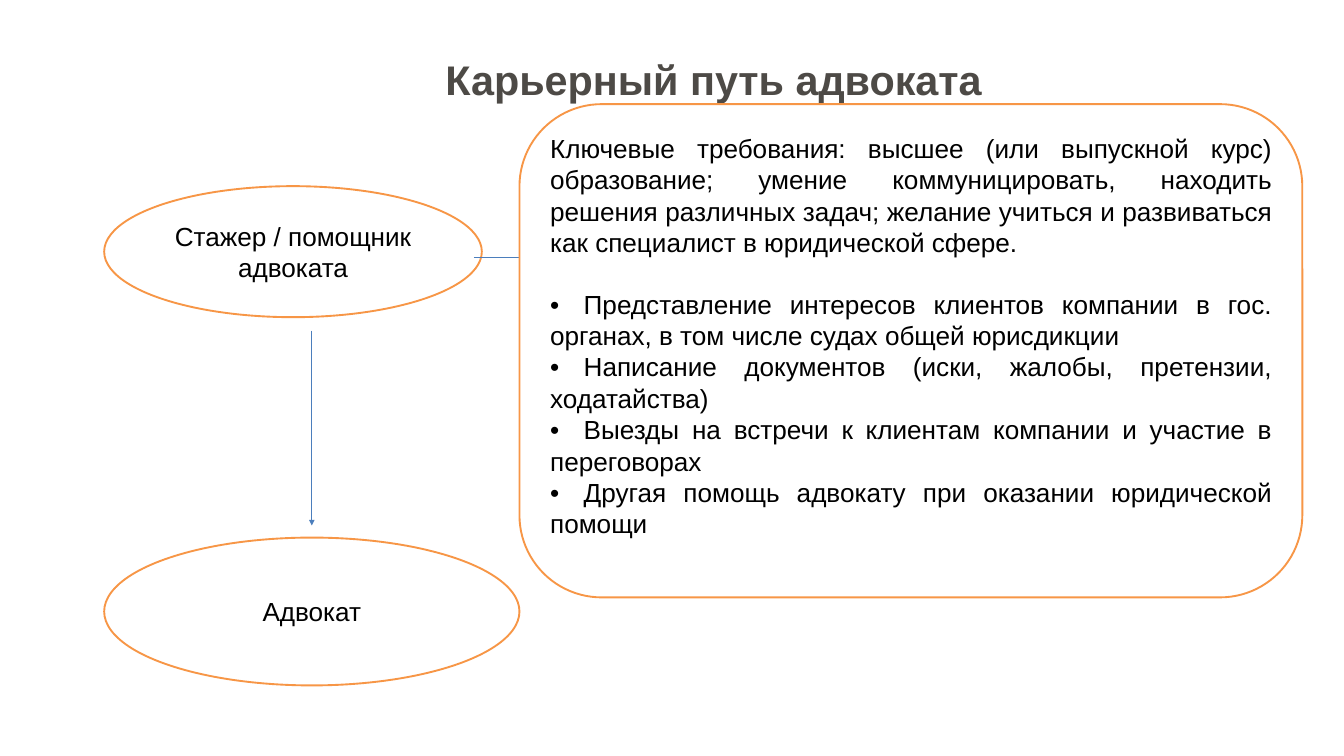
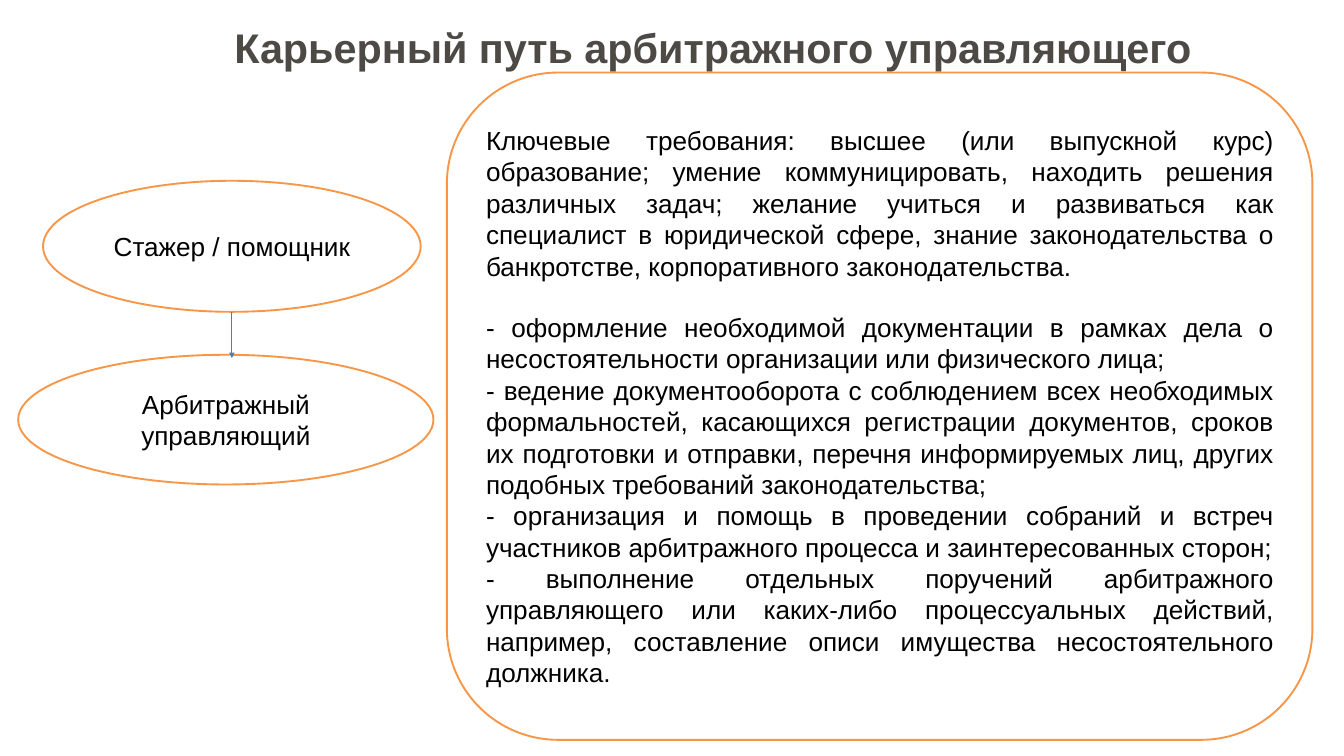
from collections import namedtuple

from lxml.etree import SubElement
from pptx import Presentation
from pptx.dml.color import RGBColor
from pptx.enum.dml import MSO_LINE
from pptx.enum.shapes import MSO_CONNECTOR, MSO_SHAPE
from pptx.enum.text import MSO_ANCHOR, PP_ALIGN
from pptx.oxml.ns import qn
from pptx.util import Inches, Pt

COLORS = {"paper": "FFFFFF", "outline": "F79646", "link": "4B7EBC", "title": "4D4A46", "text": "000000"}
FONT = "Arial"
BODY_SIZE = 28
BLANK_LINE = 32.2
COLUMNS, ROWS = 20, 11.25
CELL = Inches(1)

Box = namedtuple("Box", "left top width height")


def cells(*counts):
    """Turn counts of grid columns or rows into lengths."""
    return [round(count * CELL) for count in counts]


def color(name):
    """Look up a named colour."""
    return RGBColor.from_string(COLORS[name])


def write(frame, text, first=False, size=BODY_SIZE, ink="text", bold=False,
          align=PP_ALIGN.CENTER, spacing=None, before=0):
    """Write one formatted paragraph into a text frame."""
    para = frame.paragraphs[0] if first else frame.add_paragraph()
    para.alignment = align
    para.space_before = Pt(before)
    if spacing:
        para.line_spacing = spacing
    span = para.add_run()
    span.text = text
    span.font.name = FONT
    span.font.size = Pt(size)
    span.font.bold = bold
    span.font.color.rgb = color(ink)


def add_title(page, box, text):
    """Add the page title."""
    frame = page.shapes.add_textbox(*cells(*box)).text_frame
    frame.word_wrap = True
    frame.margin_left = frame.margin_right = frame.margin_top = frame.margin_bottom = 0
    write(frame, text, first=True, size=44.3, ink="title", bold=True, spacing=1.33)


def add_outlined(page, kind, box):
    """Add an outlined white shape and return its text frame."""
    shape = page.shapes.add_shape(kind, *cells(*box))
    shape.shadow.inherit = False
    shape.fill.solid()
    shape.fill.fore_color.rgb = color("paper")
    shape.line.color.rgb = color("outline")
    shape.line.width = Pt(2)
    frame = shape.text_frame
    frame.word_wrap = True
    frame.vertical_anchor = MSO_ANCHOR.MIDDLE
    return frame


def add_arrow(page, *ends):
    """Add a thin arrow between two grid points."""
    arrow = page.shapes.add_connector(MSO_CONNECTOR.STRAIGHT, *cells(*ends))
    arrow.line.color.rgb = color("link")
    arrow.line.width = Pt(0.75)
    arrow.line.dash_style = MSO_LINE.SOLID
    SubElement(arrow.line._get_or_add_ln(), qn("a:tailEnd"), type="triangle")
    SubElement(arrow._element.spPr, qn("a:effectLst"))


def add_career(page, start, goal, names, axis, gaps):
    """Add two career stages and the arrow that leads down between them."""
    for box, name in zip((start, goal), names):
        write(add_outlined(page, MSO_SHAPE.OVAL, box), name, first=True)
    middle = axis.left + axis.width / 2
    add_arrow(page, middle, start.top + start.height + gaps[0], middle, goal.top - gaps[1])


def add_duties(page, box, requirements, duties, blank_lines_below=0):
    """Add the card with the requirements and, one line lower, the duties."""
    frame = add_outlined(page, MSO_SHAPE.ROUNDED_RECTANGLE, box)
    frame.margin_bottom = Inches(0.05) + Pt(BLANK_LINE * blank_lines_below)
    write(frame, requirements, first=True, align=PP_ALIGN.JUSTIFY)
    for index, duty in enumerate(duties):
        write(frame, duty, align=PP_ALIGN.JUSTIFY, before=0 if index else BLANK_LINE)


def build_advocate(page):
    """Build the page on the advocate's career."""
    start, goal = Box(1.55, 2.77, 5.62, 1.95), Box(1.55, 8, 6.18, 2.2)
    card = Box(goal.left + goal.width, 1.55, 11.65, 7.34)
    add_title(page, Box(2.23, 0.56, 16.78, 0.99), "Карьерный путь адвоката")
    add_career(page, start, goal, ("Стажер / помощник адвоката", "Адвокат"), goal, (0.2, 0.18))
    link_row = start.top + 1.06
    add_arrow(page, start.left + 5.5, link_row, card.left + 3.47, link_row)
    add_duties(
        page, card,
        "Ключевые требования: высшее (или выпускной курс) образование; умение коммуницировать, "
        "находить решения различных задач; желание учиться и развиваться как специалист "
        "в юридической сфере.",
        ["•\t" + duty for duty in (
            "Представление интересов клиентов компании в гос. органах, в том числе судах общей юрисдикции",
            "Написание документов (иски, жалобы, претензии, ходатайства)",
            "Выезды на встречи к клиентам компании и участие в переговорах",
            "Другая помощь адвокату при оказании юридической помощи")],
        blank_lines_below=1)


def build_arbitration_manager(page):
    """Build the page on the arbitration manager's career."""
    start, goal = Box(0.64, 2.69, 5.62, 1.95), Box(0.27, 5.28, 6.18, 1.93)
    add_title(page, Box(2.22, 0.09, 16.78, 0.99), "Карьерный путь арбитражного управляющего")
    add_duties(
        page, Box(6.65, 1.08, 12.88, 9.93),
        "Ключевые требования: высшее (или выпускной курс) образование; умение коммуницировать, "
        "находить решения различных задач; желание учиться и развиваться как специалист "
        "в юридической сфере, знание законодательства о банкротстве, корпоративного законодательства.",
        ["- " + duty for duty in (
            "оформление необходимой документации в рамках дела о несостоятельности организации "
            "или физического лица;",
            "ведение документооборота с соблюдением всех необходимых формальностей, касающихся "
            "регистрации документов, сроков их подготовки и отправки, перечня информируемых лиц, "
            "других подобных требований законодательства;",
            "организация и помощь в проведении собраний и встреч участников арбитражного процесса "
            "и заинтересованных сторон;",
            "выполнение отдельных поручений арбитражного управляющего или каких-либо процессуальных "
            "действий, например, составление описи имущества несостоятельного должника.")])
    add_career(page, start, goal, ("Стажер / помощник", "Арбитражный управляющий"), start, (0, -0.05))


def main():
    """Build and save the deck."""
    deck = Presentation()
    deck.slide_width, deck.slide_height = cells(COLUMNS, ROWS)
    for build in (build_advocate, build_arbitration_manager):
        build(deck.slides.add_slide(deck.slide_layouts[6]))
    deck.save("out.pptx")


if __name__ == "__main__":
    main()
